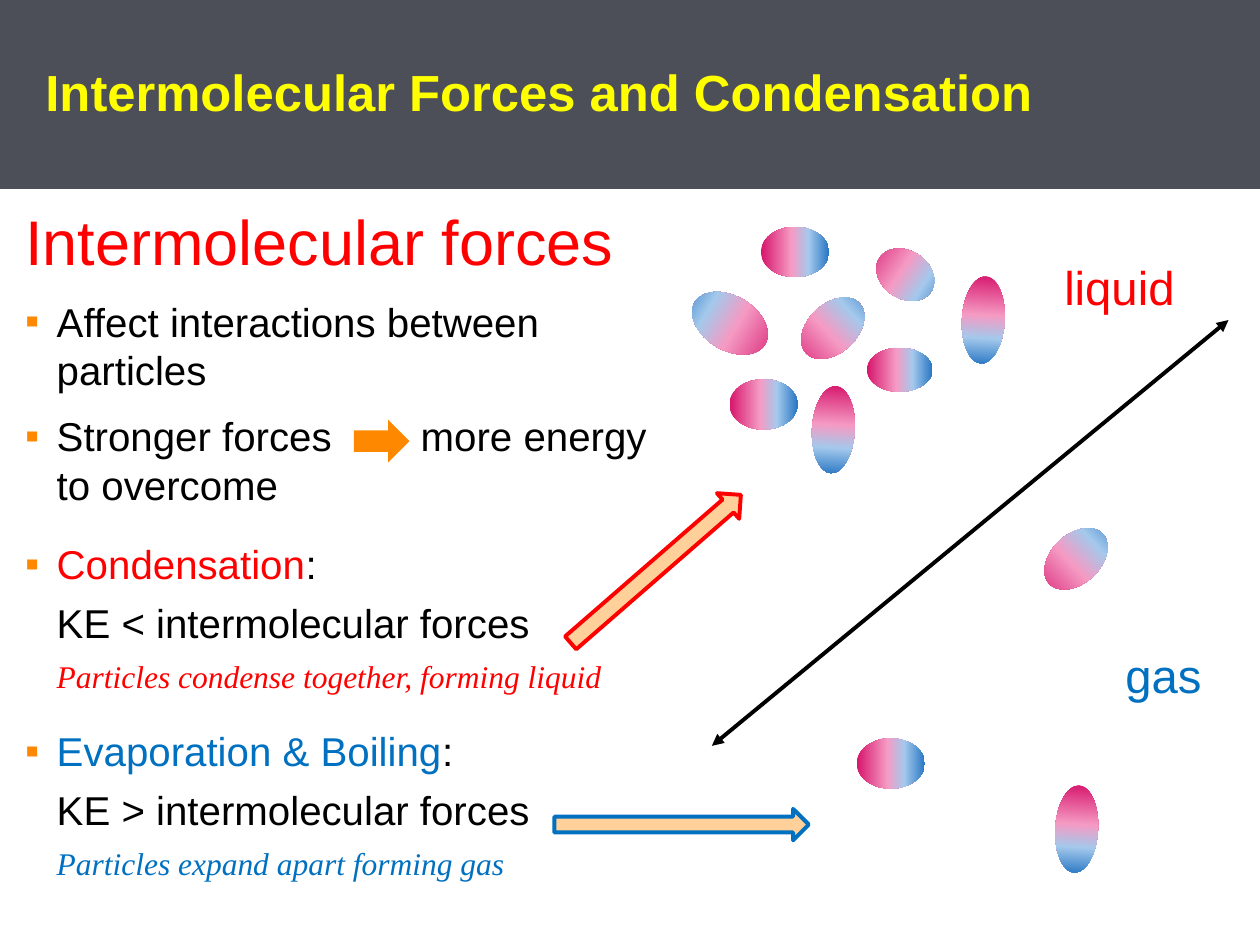
from dataclasses import dataclass

from lxml import etree
from pptx import Presentation
from pptx.dml.color import RGBColor
from pptx.enum.shapes import MSO_CONNECTOR, MSO_SHAPE
from pptx.enum.text import MSO_ANCHOR, PP_ALIGN
from pptx.oxml.ns import qn
from pptx.util import Pt

RECTANGLE = MSO_SHAPE.RECTANGLE
ELLIPSE = MSO_SHAPE.OVAL
RIGHT_ARROW = MSO_SHAPE.RIGHT_ARROW
STRAIGHT = MSO_CONNECTOR.STRAIGHT
MIDDLE = MSO_ANCHOR.MIDDLE
LEFT = PP_ALIGN.LEFT
CENTER = PP_ALIGN.CENTER


@dataclass(frozen=True)
class Theme:
    font: str = "Arial"
    note_font: str = "Times New Roman"
    banner: str = "4D4F58"
    title: str = "FFFF00"
    text: str = "000000"
    liquid: str = "FF0000"
    gas: str = "0070C0"
    accent: str = "FE8900"
    arrow: str = "FFD099"
    particle: tuple = ((0, "D6156C"), (45, "F59BC4"), (70, "A4C9EC"), (100, "2877C4"))
    title_size: float = 29
    heading_size: float = 36
    body_size: float = 23
    note_size: float = 18
    label_size: float = 27
    line_width: float = 2.25
    indent: float = 18
    tab: float = 226


class SlideBuilder:
    def __init__(self, slide, theme):
        self.shapes = slide.shapes
        self.theme = theme

    def add_run(self, paragraph, text, size, color, font=None, bold=False, italic=False):
        run = paragraph.add_run()
        run.text = text
        run.font.name = font or self.theme.font
        run.font.size = Pt(size)
        run.font.bold = bold
        run.font.italic = italic
        run.font.color.rgb = RGBColor.from_string(color)

    def set_frame(self, frame, left, top, right, bottom):
        frame.word_wrap = True
        frame.margin_left, frame.margin_top = Pt(left), Pt(top)
        frame.margin_right, frame.margin_bottom = Pt(right), Pt(bottom)

    def shape(self, kind, box, fill=None, line=None, rotation=0):
        shape = self.shapes.add_shape(kind, *map(Pt, box))
        shape.shadow.inherit = False
        shape.rotation = rotation
        if fill:
            shape.fill.solid()
            shape.fill.fore_color.rgb = RGBColor.from_string(fill)
        if line:
            shape.line.color.rgb = RGBColor.from_string(line)
            shape.line.width = Pt(self.theme.line_width)
        else:
            shape.line.fill.background()
        return shape

    def banner(self, text, box):
        frame = self.shape(RECTANGLE, box, self.theme.banner).text_frame
        self.set_frame(frame, 26, 11, 26, 11)
        frame.vertical_anchor = MIDDLE
        paragraph = frame.paragraphs[0]
        paragraph.alignment = LEFT
        paragraph.line_spacing = 0.95
        self.add_run(paragraph, text, self.theme.title_size, self.theme.title, bold=True)

    def body(self, box):
        frame = self.shapes.add_textbox(*map(Pt, box)).text_frame
        self.set_frame(frame, 14.4, 7.2, 0, 15)
        return frame

    def heading(self, frame, text):
        self.add_run(frame.paragraphs[0], text, self.theme.heading_size, self.theme.liquid)

    def indented(self, frame, space_before, first_line=0):
        paragraph = frame.add_paragraph()
        paragraph.space_before = Pt(space_before)
        properties = paragraph._p.get_or_add_pPr()
        properties.set("marL", str(Pt(self.theme.indent)))
        properties.set("indent", str(Pt(first_line)))
        return paragraph

    def bullet(self, frame, text, space_before=10.5, term=None):
        """Add a bullet whose optional term is a (text, color) pair before the text."""
        paragraph = self.indented(frame, space_before, -self.theme.indent)
        properties = paragraph._p.get_or_add_pPr()
        color = etree.SubElement(properties, qn("a:buClr"))
        etree.SubElement(color, qn("a:srgbClr"), val=self.theme.accent)
        etree.SubElement(properties, qn("a:buFont"), typeface=self.theme.font)
        etree.SubElement(properties, qn("a:buChar"), char="▪")
        if "\t" in text:
            tabs = etree.SubElement(properties, qn("a:tabLst"))
            etree.SubElement(tabs, qn("a:tab"), pos=str(Pt(self.theme.tab)), algn="l")
        if term:
            self.add_run(paragraph, term[0], self.theme.body_size, term[1])
        self.add_run(paragraph, text, self.theme.body_size, self.theme.text)

    def process(self, frame, name, condition, note, color):
        self.bullet(frame, ":", 18, (name, color))
        self.add_run(self.indented(frame, 6), condition, self.theme.body_size, self.theme.text)
        self.add_run(self.indented(frame, 6), note, self.theme.note_size, color,
                     self.theme.note_font, italic=True)

    def particle(self, left, top, size, rotation=0, flipped=False):
        shape = self.shape(ELLIPSE, (left, top, *size), rotation=rotation)
        if flipped:
            shape._element.spPr.xfrm.set("flipH", "1")
        shape.fill.gradient()
        shape.fill.gradient_angle = 0
        stops = shape._element.spPr.find(qn("a:gradFill")).find(qn("a:gsLst"))
        for stop in list(stops):
            stops.remove(stop)
        for position, color in self.theme.particle:
            stop = etree.SubElement(stops, qn("a:gs"), pos=str(position * 1000))
            etree.SubElement(stop, qn("a:srgbClr"), val=color)

    def double_arrow(self, start, end):
        connector = self.shapes.add_connector(STRAIGHT, *map(Pt, (*start, *end)))
        connector.line.color.rgb = RGBColor.from_string(self.theme.text)
        connector.line.width = Pt(self.theme.line_width)
        properties = connector._element.spPr
        line = properties.find(qn("a:ln"))
        for tag in ("a:headEnd", "a:tailEnd"):
            etree.SubElement(line, qn(tag), type="triangle")
        etree.SubElement(properties, qn("a:effectLst"))

    def label(self, text, left, top, color):
        frame = self.shapes.add_textbox(Pt(left), Pt(top), Pt(100), Pt(40)).text_frame
        frame.word_wrap = True
        frame.paragraphs[0].alignment = CENTER
        self.add_run(frame.paragraphs[0], text, self.theme.label_size, color)


def main():
    presentation = Presentation()
    presentation.slide_width, presentation.slide_height = Pt(720), Pt(540)
    slide = presentation.slides.add_slide(presentation.slide_layouts[6])
    theme = Theme()
    builder = SlideBuilder(slide, theme)

    builder.banner("Intermolecular Forces and Condensation", (0, 0, 720, 108))
    body = builder.body((0, 108.7, 387.4, 431.3))
    builder.heading(body, "Intermolecular forces")
    builder.bullet(body, "Affect interactions between particles")
    builder.bullet(body, "Stronger forces\tmore energy to overcome")
    builder.process(body, "Condensation", "KE < intermolecular forces",
                    "Particles condense together, forming liquid", theme.liquid)
    builder.process(body, "Evaporation & Boiling", "KE > intermolecular forces",
                    "Particles expand apart forming gas", theme.gas)
    builder.shape(RIGHT_ARROW, (202.3, 239.8, 31.7, 24.5), theme.accent)

    level, tilted, upright = (38.9, 28.8), (41.8, 28.1), (49.7, 24.5)
    for left, top in ((434.9, 129.6), (416.9, 216.7), (489.6, 421.9)):
        builder.particle(left, top, level)
    for left, top in ((455, 173.5), (594, 305.3)):
        builder.particle(left, top, tilted, 317)
    for left, top in ((537.1, 170.6), (451.4, 233.3), (590.4, 461.5)):
        builder.particle(left, top, upright, 273.3, flipped=True)
    builder.particle(499.7, 143.3, (35.3, 27.4), 33.5)
    builder.particle(393.8, 169.2, (46.8, 31), 30.9, flipped=True)
    builder.particle(495.4, 198.7, (37.4, 25.2))

    builder.double_arrow((702, 182.9), (406.8, 426.2))
    builder.label("liquid", 589.7, 144, theme.liquid)
    builder.label("gas", 614.9, 365.8, theme.gas)
    builder.shape(RIGHT_ARROW, (310.3, 315.4, 128.9, 19.4), theme.arrow, theme.liquid, 319)
    builder.shape(RIGHT_ARROW, (316.8, 462.2, 145.4, 18), theme.arrow, theme.gas)

    presentation.save("out.pptx")


if __name__ == "__main__":
    main()
